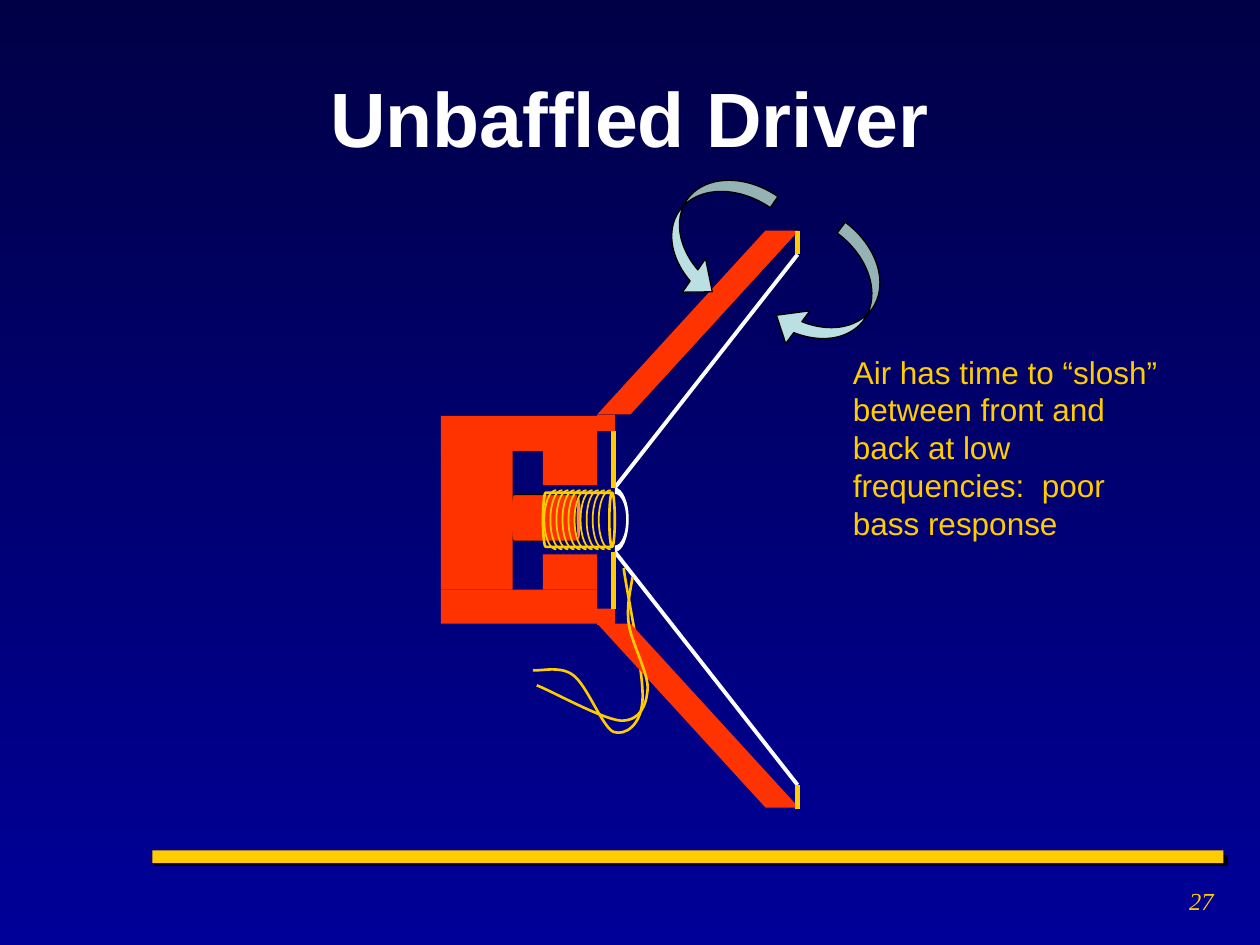
from lxml import etree
from pptx import Presentation
from pptx.dml.color import RGBColor
from pptx.enum import shapes as kinds, text
from pptx.oxml import ns
from pptx.util import Inches, Pt

RED, GOLD, WHITE, BLACK, PALE = "FF3300", "FFCC00", "FFFFFF", "000000", "BBE0E3"
SHAPE = kinds.MSO_SHAPE


def color(hex_string):
    """Turn a hex string into a colour."""
    return RGBColor.from_string(hex_string)


def paint(shape, fill=None, line=None, width=0.75):
    """Set fill and outline and drop the shadow."""
    shape.shadow.inherit = False
    if fill:
        shape.fill.solid()
        shape.fill.fore_color.rgb = color(fill)
    else:
        shape.fill.background()
    if line:
        shape.line.color.rgb = color(line)
        shape.line.width = Pt(width)
    else:
        shape.line.fill.background()


def add_preset(target, kind, box, fill=None, line=None, width=0.75, rotation=0, flip=None, adjust=()):
    """Add a preset shape, optionally turned and mirrored."""
    shape = target.shapes.add_shape(kind, *map(Inches, box))
    paint(shape, fill, line, width)
    shape.rotation = rotation
    for index, value in enumerate(adjust):
        shape.adjustments[index] = value
    if flip:
        shape.element.spPr.get_or_add_xfrm().set(flip, "1")


def add_line(target, start, end, line, width):
    """Add a straight line."""
    connector = target.shapes.add_connector(
        kinds.MSO_CONNECTOR.STRAIGHT, *map(Inches, start + end))
    connector.line.color.rgb = color(line)
    connector.line.width = Pt(width)
    etree.SubElement(connector.element.spPr, ns.qn("a:effectLst"))


def add_curve(target, start, segments, close=False, **style):
    """Add a freeform; segments of three points are cubic curves, of one point lines."""
    builder = target.shapes.build_freeform(*map(Inches, start))
    builder.add_line_segments(
        [(Inches(x), Inches(y)) for segment in segments for x, y in segment], close=close)
    shape = builder.convert_to_shape()
    steps = iter(list(shape.element.iter(ns.qn("a:lnTo"))))
    for segment in segments:
        corners = [next(steps) for _ in segment]
        if len(corners) == 3:
            curve = etree.Element(ns.qn("a:cubicBezTo"))
            corners[0].addprevious(curve)
            for corner in corners:
                curve.append(corner[0])
                corner.getparent().remove(corner)
    paint(shape, **style)


def add_text(slide, box, words, size, font, ink, align, anchor=text.MSO_ANCHOR.TOP,
             bold=False, italic=False, grow=False):
    """Add a wrapped text box with one run."""
    frame = slide.shapes.add_textbox(*map(Inches, box)).text_frame
    frame.word_wrap = True
    frame.vertical_anchor = anchor
    if grow:
        frame.auto_size = text.MSO_AUTO_SIZE.SHAPE_TO_FIT_TEXT
    paragraph = frame.paragraphs[0]
    paragraph.alignment = align
    run = paragraph.add_run()
    run.text = words
    run.font.name, run.font.size = font, Pt(size)
    run.font.bold, run.font.italic = bold, italic
    run.font.color.rgb = color(ink)


def set_background(slide, top, bottom):
    """Fill the background with a vertical gradient."""
    fill = slide.background.fill
    fill.gradient()
    fill.gradient_angle = 270
    for stop, hex_string in zip(fill.gradient_stops, (top, bottom)):
        stop.color.rgb = color(hex_string)


def add_coil(driver):
    """Draw the pole, the voice coil former and its ten turns."""
    add_preset(driver, SHAPE.CAN, (4.15, 3.83, 0.37, 0.56), RED, BLACK,
               rotation=90, flip="flipH", adjust=[0.117])
    add_preset(driver, SHAPE.CAN, (4.38, 3.84, 0.43, 0.57), None, GOLD, 1.5,
               rotation=90, flip="flipH", adjust=[0.101])
    middle, radius = 4.125, 0.235
    for turn in range(10):
        left = 4.32 + 0.048 * turn
        for side in (-radius, radius):
            edge = middle + side
            quarter = ((left + 0.04, edge), (left, middle + 0.56 * side), (left, middle))
            add_curve(driver, (left + 0.095, edge), [quarter], line=GOLD, width=1)


def add_frame(driver):
    """Draw the magnet, the basket and the cone."""
    for box in ((4.31, 3.57, 0.43, 0.28), (4.31, 4.4, 0.43, 0.28), (3.5, 3.57, 0.57, 1.11),
                (3.5, 3.3, 1.24, 0.28), (3.5, 4.68, 1.24, 0.27)):
        add_preset(driver, SHAPE.RECTANGLE, box, RED)
    for inner, outer in ((3.87, 2.02), (4.38, 6.23)):
        add_line(driver, (4.88, inner), (6.33, outer), WHITE, 2.25)
    for top, flip in ((1.83, None), (4.95, "flipV")):
        add_preset(driver, SHAPE.PARALLELOGRAM, (4.74, top, 1.6, 1.46), RED,
                   flip=flip, adjust=[0.915])
    for top in (3.29, 4.83):
        add_preset(driver, SHAPE.RECTANGLE, (4.74, top, 0.14, 0.13), RED)
    add_curve(driver, (4.88, 3.92), [
        ((4.93, 3.92), (4.97, 4.01), (4.97, 4.12)),
        ((4.97, 4.24), (4.93, 4.33), (4.88, 4.33)),
        ((4.88, 4.38),),
        ((4.94, 4.38), (4.99, 4.27), (4.99, 4.12)),
        ((4.99, 3.98), (4.94, 3.87), (4.88, 3.87))], close=True, fill=WHITE)
    for x, bottom, top in ((4.87, 3.87, 3.42), (4.87, 4.83, 4.38),
                           (6.33, 6.42, 6.23), (6.33, 2.02, 1.83)):
        add_line(driver, (x, bottom), (x, top), GOLD, 3)


def add_driver(slide):
    """Draw the loudspeaker with its two lead wires."""
    driver = slide.shapes.add_group_shape()
    add_curve(driver, (4.23, 5.32), [
        ((4.28, 5.33), (4.45, 5.28), (4.55, 5.36)),
        ((4.66, 5.44), (4.78, 5.77), (4.87, 5.81)),
        ((4.96, 5.84), (5.09, 5.76), (5.1, 5.55)),
        ((5.11, 5.33), (4.98, 4.73), (4.95, 4.51))], line=GOLD, width=1.5)
    add_coil(driver)
    add_frame(driver)
    add_curve(driver, (4.26, 5.44), [
        ((4.37, 5.48), (4.78, 5.71), (4.93, 5.72)),
        ((5.08, 5.72), (5.13, 5.6), (5.14, 5.47)),
        ((5.15, 5.35), (5.01, 5.1), (4.99, 4.95)),
        ((4.97, 4.8), (5.01, 4.66), (5.02, 4.58))], line=GOLD, width=1.5)


def main():
    """Build the slide and save it."""
    presentation = Presentation()
    presentation.slide_width, presentation.slide_height = Inches(10), Inches(7.5)
    slide = presentation.slides.add_slide(presentation.slide_layouts[6])
    set_background(slide, "000047", "000099")
    footer_rule = slide.shapes.add_group_shape()
    add_preset(footer_rule, SHAPE.RECTANGLE, (1.23, 6.79, 8.51, 0.08), BLACK, BLACK)
    add_preset(footer_rule, SHAPE.RECTANGLE, (1.21, 6.75, 8.5, 0.1), GOLD)
    add_text(slide, (8.1, 6.98, 1.63, 0.52), "27", 14, "Times New Roman", GOLD,
             text.PP_ALIGN.RIGHT, italic=True)
    add_text(slide, (0.5, 0.3, 9, 1.25), "Unbaffled Driver", 44, "Arial", WHITE,
             text.PP_ALIGN.CENTER, text.MSO_ANCHOR.MIDDLE, bold=True)
    add_driver(slide)
    for left, top, rotation, flip in ((5.34, 1.3, 34.6, "flipH"), (6.33, 1.83, 36.5, None)):
        add_preset(slide, SHAPE.CURVED_LEFT_ARROW, (left, top, 0.58, 1.08), PALE, BLACK,
                   rotation=rotation, flip=flip, adjust=[0.185, 0.557, 0.333])
    add_text(slide, (6.67, 2.75, 2.67, 1.67),
             "Air has time to “slosh” between front and back at low frequencies:  poor bass response",
             18, "Arial", GOLD, text.PP_ALIGN.LEFT, grow=True)
    presentation.save("out.pptx")


if __name__ == "__main__":
    main()
